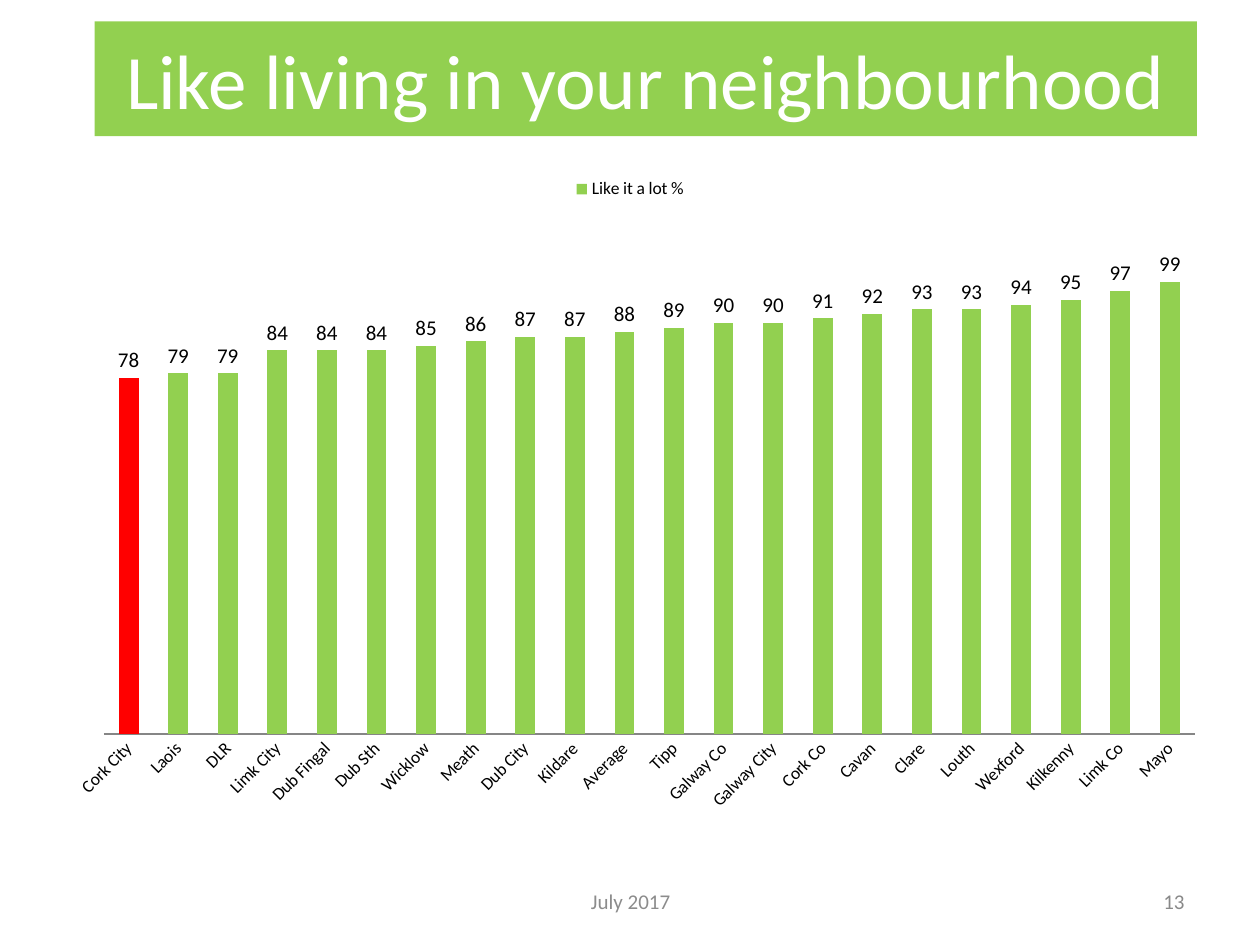
from lxml import etree
from pptx import Presentation
from pptx.chart.data import CategoryChartData
from pptx.dml.color import RGBColor
from pptx.enum.chart import XL_CHART_TYPE, XL_LABEL_POSITION, XL_LEGEND_POSITION, XL_TICK_MARK
from pptx.enum.shapes import MSO_SHAPE
from pptx.enum.text import MSO_ANCHOR, PP_ALIGN
from pptx.oxml.ns import qn
from pptx.util import Inches, Pt

COLUMN = XL_CHART_TYPE.COLUMN_CLUSTERED
OUTSIDE = XL_LABEL_POSITION.OUTSIDE_END
TOP = XL_LEGEND_POSITION.TOP
NO_TICK = XL_TICK_MARK.NONE
RECT = MSO_SHAPE.RECTANGLE
MIDDLE = MSO_ANCHOR.MIDDLE
CENTER, RIGHT = PP_ALIGN.CENTER, PP_ALIGN.RIGHT

COLORS = {
    "green": "92D050",
    "red": "FF0000",
    "white": "FFFFFF",
    "black": "000000",
    "date": "8C8C8C",
    "number": "898989",
    "axis": "868686",
}
SCORES = [
    ("Cork City", 78), ("Laois", 79), ("DLR", 79), ("Limk City", 84),
    ("Dub Fingal", 84), ("Dub Sth", 84), ("Wicklow", 85), ("Meath", 86),
    ("Dub City", 87), ("Kildare", 87), ("Average", 88), ("Tipp", 89),
    ("Galway Co", 90), ("Galway City", 90), ("Cork Co", 91), ("Cavan", 92),
    ("Clare", 93), ("Louth", 93), ("Wexford", 94), ("Kilkenny", 95),
    ("Limk Co", 97), ("Mayo", 99),
]


def set_plot(chart, x, y, w, h):
    """Fix the inner plot area, in fractions of the chart."""
    area = chart.element.find(f".//{qn('c:plotArea')}")
    for old in area.findall(qn("c:layout")):
        area.remove(old)
    layout = etree.Element(qn("c:layout"))
    manual = etree.SubElement(layout, qn("c:manualLayout"))
    parts = [("layoutTarget", "inner"), ("xMode", "edge"), ("yMode", "edge"),
             ("x", x), ("y", y), ("w", w), ("h", h)]
    for tag, val in parts:
        etree.SubElement(manual, qn(f"c:{tag}")).set("val", str(val))
    area.insert(0, layout)


def tilt(chart, angle):
    """Turn the category labels by an angle in degrees."""
    labels = f".//{qn('c:catAx')}/{qn('c:txPr')}/{qn('a:bodyPr')}"
    body = chart.element.find(labels)
    body.set("rot", str(angle * 60000))
    body.set("vert", "horz")


class Deck:
    """Holds the style and the current slide."""

    def __init__(self, slide, face="Calibri"):
        self.slide = slide
        self.face = face

    def color(self, name):
        return RGBColor.from_string(COLORS[name])

    def style(self, font, size, color):
        font.name = self.face
        font.size = Pt(size)
        font.color.rgb = self.color(color)

    def fill(self, item, color):
        item.fill.solid()
        item.fill.fore_color.rgb = self.color(color)

    def put_text(self, shape, text, size, color, align):
        frame = shape.text_frame
        frame.word_wrap = True
        frame.vertical_anchor = MIDDLE
        frame.text = text
        line = frame.paragraphs[0]
        line.alignment = align
        self.style(line.runs[0].font, size, color)

    def banner(self, text, box, size):
        shape = self.slide.shapes.add_shape(RECT, *map(Inches, box))
        shape.shadow.inherit = False
        self.fill(shape, "green")
        shape.line.fill.background()
        self.put_text(shape, text, size, "white", CENTER)

    def label(self, text, box, color, align):
        shape = self.slide.shapes.add_textbox(*map(Inches, box))
        self.put_text(shape, text, 12, color, align)

    def columns(self, name, scores, box):
        data = CategoryChartData(number_format="General")
        data.categories = [place for place, score in scores]
        data.add_series(name, [score for place, score in scores])
        chart = self.slide.shapes.add_chart(COLUMN, *map(Inches, box), data).chart
        self.style(chart.font, 10, "black")
        chart.has_title = False
        chart.has_legend = True
        chart.legend.position = TOP
        chart.legend.include_in_layout = False
        set_plot(chart, 0.036, 0.031, 0.962, 0.807)

        plot = chart.plots[0]
        plot.vary_by_categories = False
        plot.gap_width = 150
        plot.overlap = -25
        series = plot.series[0]
        self.fill(series.format, "green")
        self.fill(series.points[0].format, "red")
        labels = series.data_labels
        labels.show_value = True
        labels.number_format = "#,##0"
        labels.number_format_is_linked = False
        labels.position = OUTSIDE
        self.style(labels.font, 12, "black")

        values = chart.value_axis
        values.minimum_scale, values.maximum_scale = 0, 120
        values.has_major_gridlines = False
        values.visible = False
        places = chart.category_axis
        places.major_tick_mark = NO_TICK
        places.format.line.color.rgb = self.color("axis")
        places.format.line.width = Pt(0.75)
        self.style(places.tick_labels.font, 10, "black")
        tilt(chart, -45)


def main():
    show = Presentation()
    show.slide_width, show.slide_height = Inches(10), Inches(7.5)
    deck = Deck(show.slides.add_slide(show.slide_layouts[6]))
    deck.banner("Like living in your neighbourhood", (0.75, 0.17, 8.75, 0.91), 44)
    deck.columns("Like it a lot %", SCORES, (0.5, 1.31, 9, 5.39))
    deck.label("July 2017", (3.42, 6.95, 3.17, 0.4), "date", CENTER)
    deck.label("13", (7.17, 6.95, 2.33, 0.4), "number", RIGHT)
    show.save("out.pptx")


if __name__ == "__main__":
    main()
